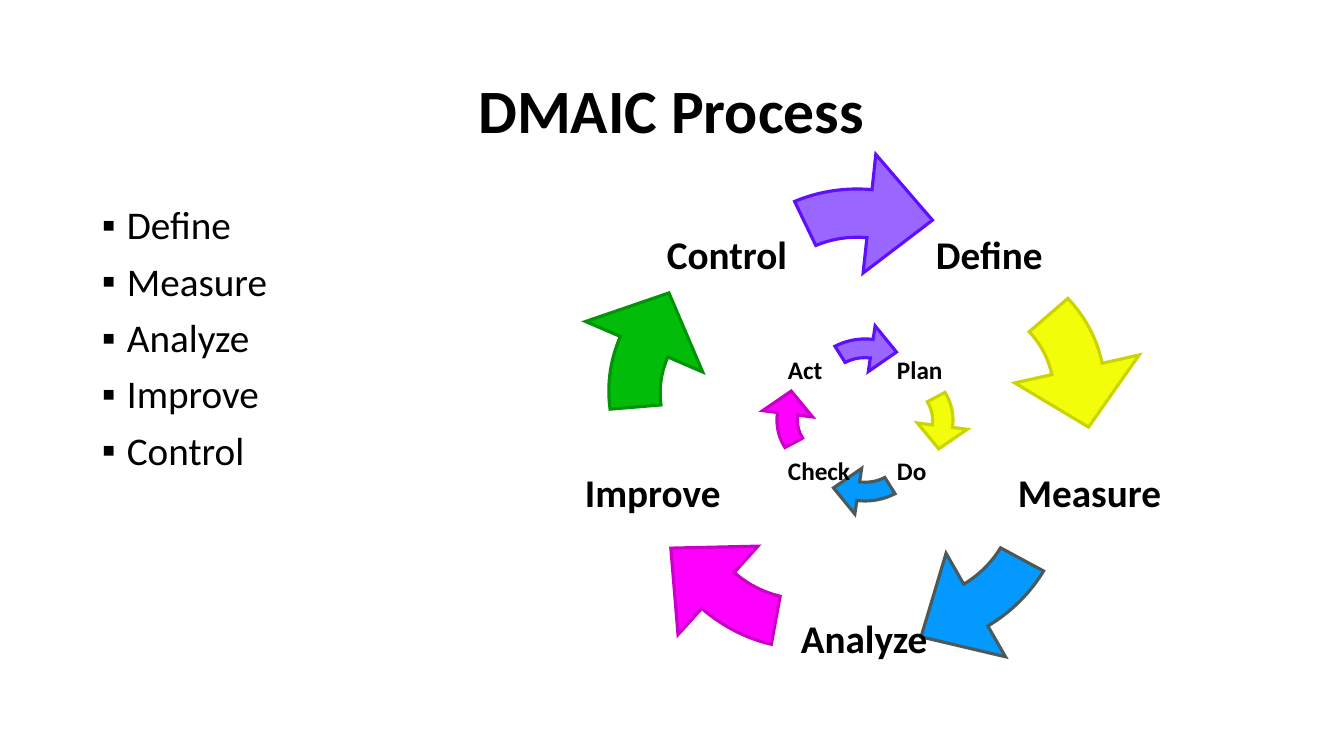
import math
import pptx
import pptx.dml.color
import pptx.enum.text
import pptx.oxml
import pptx.oxml.ns
import pptx.util

PX = 914400 / 100.8  # EMU per px
NS = pptx.oxml.ns.nsdecls("a")
ALIGN = pptx.enum.text.PP_ALIGN
ANCHOR = pptx.enum.text.MSO_ANCHOR
COLORS = {
    "text": "000000",
    "purple": "9966FF", "purple line": "5F0FFF",
    "yellow": "F1FD09", "yellow line": "CAD402",
    "blue": "0399FF", "blue line": "4B595B",
    "magenta": "FF00FF", "magenta line": "CA00CA",
    "green": "01BD0A", "green line": "019308",
}


def emu(px):
    return pptx.util.Emu(round(px * PX))


def put_text(sp, text, box, size=28, bold=False, align=ALIGN.LEFT, anchor=ANCHOR.MIDDLE,
             wrap=True, inset=None, leading=None, before=None, bullet=None):
    sp.left, sp.top, sp.width, sp.height = map(emu, box)
    tf = sp.text_frame
    tf.auto_size = pptx.enum.text.MSO_AUTO_SIZE.NONE
    tf.word_wrap, tf.vertical_anchor = wrap, anchor
    if inset is not None:
        tf.margin_left = tf.margin_top = tf.margin_right = tf.margin_bottom = emu(inset)
    for i, line in enumerate(text.split("\n")):
        p = tf.add_paragraph() if i else tf.paragraphs[0]
        p.alignment, p.line_spacing = align, leading
        if before is not None:
            p.space_before = pptx.util.Pt(before)
        r = p.add_run()
        r.text = line
        r.font.name, r.font.size, r.font.bold = "Calibri", pptx.util.Pt(size), bold
        r.font.color.rgb = pptx.dml.color.RGBColor.from_string(COLORS["text"])
        if bullet:
            pPr = p._p.get_or_add_pPr()
            pPr.set("marL", str(emu(25)))
            pPr.set("indent", str(-emu(25)))
            pPr.append(pptx.oxml.parse_xml(f'<a:buFont {NS} typeface="Arial"/>'))
            pPr.append(pptx.oxml.parse_xml(f'<a:buChar {NS} char="{bullet}"/>'))


prs = pptx.Presentation()
prs.slide_width, prs.slide_height = emu(1344), emu(756)
s = prs.slides.add_slide(prs.slide_layouts[5])

# Title and list of steps
put_text(s.shapes.title, "DMAIC Process", (92, 41, 1159, 146), size=44, bold=True,
         align=ALIGN.CENTER, leading=0.9)
put_text(s.shapes.add_textbox(0, 0, 0, 0), "Define\nMeasure\nAnalyze\nImprove\nControl",
         (92, 201, 1159, 480), anchor=ANCHOR.TOP, leading=0.9, before=10, bullet="▪")

# DMAIC cycle outside, PDCA cycle inside; arrow angles are clockwise from the top
cycles = [
    dict(center=(857, 426), orbit=(102, 95), half=(152, 142), tail=-24.2, head=5.7, tip=32.5,
         arrows=["purple", "yellow", "blue", "magenta", "green"], size=28, label=(112, 104),
         labels=[("Define", 936, 202), ("Improve", 585, 440), ("Control", 667, 202),
                 ("Measure", 1018, 440), ("Analyze", 801, 586)]),
    dict(center=(865, 420), orbit=(28, 26), half=(60, 55), tail=-30, head=7.8, tip=34.6,
         arrows=["purple", "yellow", "blue", "magenta"], size=18, label=(45, 42),
         labels=[("Plan", 897, 348), ("Check", 788, 449), ("Act", 788, 348), ("Do", 897, 449)]),
]
for cycle in cycles:
    # Outline of one arrow on a unit circle: inner arc, outer arc, arrowhead
    tail, head = cycle["tail"], cycle["head"]
    outline = []
    for radius, stops in ((0.66, (head, 0, tail)), (1, (tail, 0, head))):
        a = math.radians(stops[0])
        start = (radius * math.sin(a), -radius * math.cos(a))
        outline.append(("lnTo" if outline else "moveTo", [start]))
        for stop in stops[1:]:
            b = math.radians(stop)
            k = radius * 4 / 3 * math.tan((b - a) / 4)
            end = (radius * math.sin(b), -radius * math.cos(b))
            outline.append(("cubicBezTo", [
                (start[0] + k * math.cos(a), start[1] + k * math.sin(a)),
                (end[0] - k * math.cos(b), end[1] - k * math.sin(b)), end]))
            a, start = b, end
    for angle, radius in ((head, 1.25), (cycle["tip"], 0.925), (head, 0.41)):
        a = math.radians(angle)
        outline.append(("lnTo", [(radius * math.sin(a), -radius * math.cos(a))]))

    for i, color in enumerate(cycle["arrows"]):
        turn = 2 * math.pi * i / len(cycle["arrows"])
        cx = cycle["center"][0] + cycle["orbit"][0] * math.sin(turn)
        cy = cycle["center"][1] - cycle["orbit"][1] * math.cos(turn)
        # Arrows lying on their side swap width and height
        sideways = abs(math.sin(turn)) > abs(math.cos(turn))
        rx, ry = reversed(cycle["half"]) if sideways else cycle["half"]
        fb = s.shapes.build_freeform(emu(cx - rx), emu(cy - ry))
        fb.add_line_segments([(emu(cx + rx), emu(cy + ry))])
        sp = fb.convert_to_shape()
        sp.rotation = math.degrees(turn)

        # Curved outline inside the arrow's box
        outline_xml = ""
        for command, points in outline:
            pts = "".join(f'<a:pt x="{emu(rx * (1 + x))}" y="{emu(ry * (1 + y))}"/>'
                          for x, y in points)
            outline_xml += f"<a:{command}>{pts}</a:{command}>"
        old = sp._element.find(".//" + pptx.oxml.ns.qn("a:path"))
        old.getparent().replace(old, pptx.oxml.parse_xml(
            f'<a:path {NS} w="{sp.width}" h="{sp.height}">{outline_xml}<a:close/></a:path>'))

        sp.shadow.inherit = False
        sp.fill.solid()
        sp.fill.fore_color.rgb = pptx.dml.color.RGBColor.from_string(COLORS[color])
        sp.line.color.rgb = pptx.dml.color.RGBColor.from_string(COLORS[color + " line"])
        sp.line.width = pptx.util.Pt(2.25)
        sp.line._get_or_add_ln().append(pptx.oxml.parse_xml(f'<a:miter {NS} lim="800000"/>'))

    for text, left, top in cycle["labels"]:
        put_text(s.shapes.add_textbox(0, 0, 0, 0), text, (left, top, *cycle["label"]),
                 size=cycle["size"], bold=True, wrap=False, inset=0)

prs.save("out.pptx")
